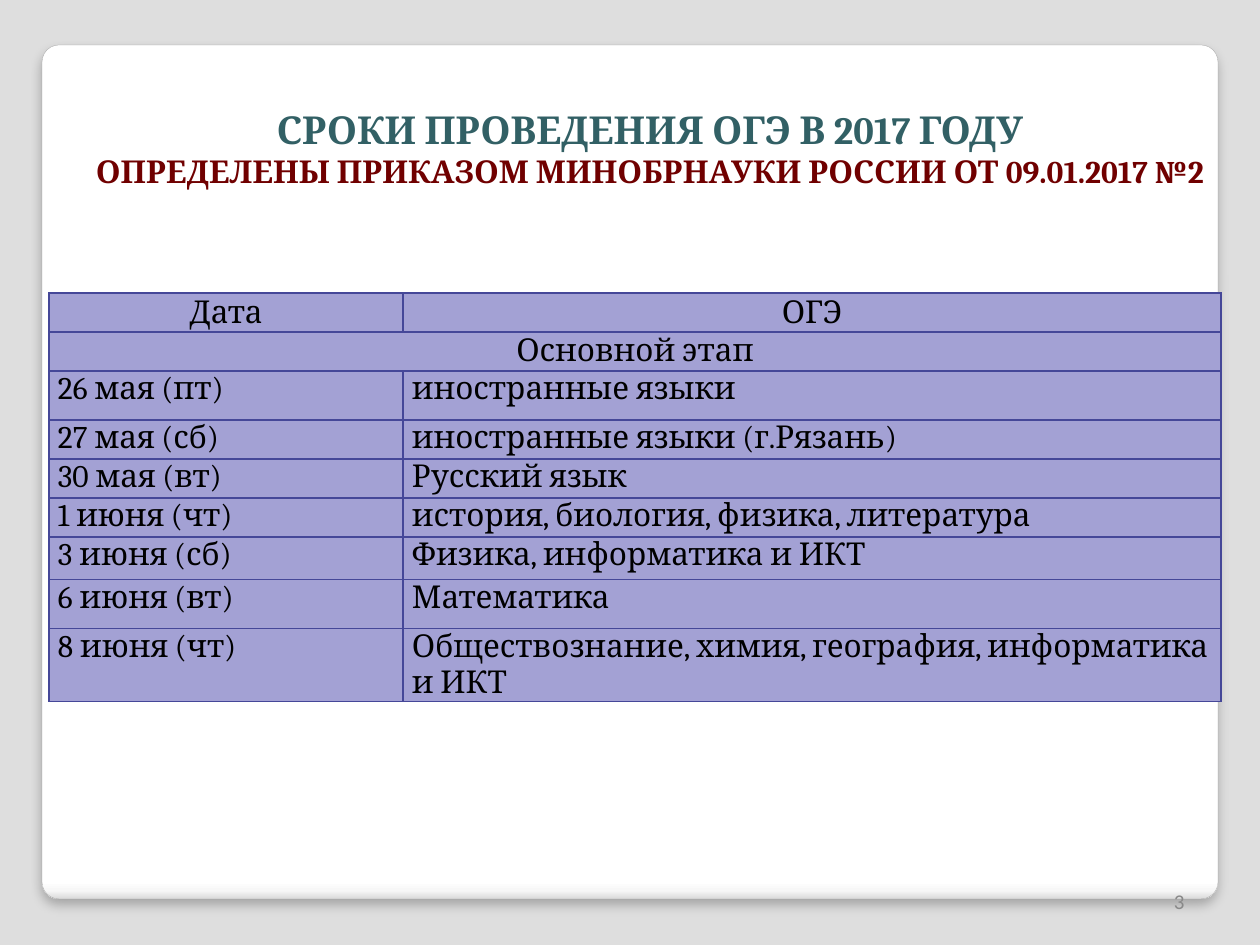
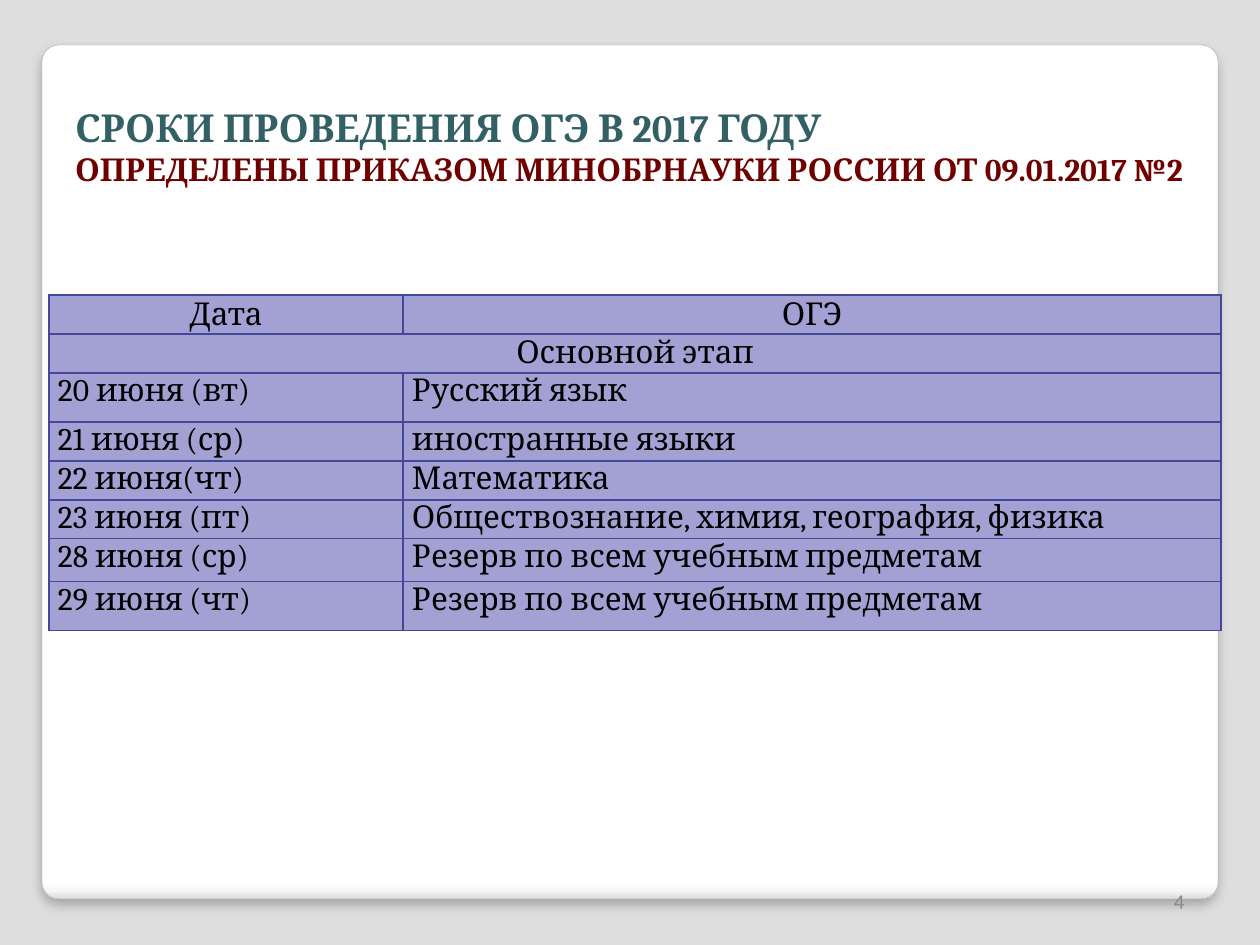
from dataclasses import dataclass

import lxml.etree
import pptx
import pptx.dml.color
import pptx.enum.shapes
import pptx.enum.text
import pptx.oxml.ns
import pptx.util

PX = 914400 / 126  # EMU per px
ALIGN = pptx.enum.text.PP_ALIGN
ANCHOR = pptx.enum.text.MSO_ANCHOR
qn = pptx.oxml.ns.qn


@dataclass(frozen=True)
class Theme:
    serif: str = "Cambria"
    sans: str = "Calibri"
    background: str = "DEDEDE"
    card_line: str = "A4A4A4"
    heading: str = "326065"
    subheading: str = "700000"
    cell: str = "A3A1D4"
    border: str = "454798"
    text: str = "000000"
    number: str = "898989"
    heading_size: int = 22
    body_size: int = 18
    number_size: int = 12


@dataclass(frozen=True)
class Box:
    left: int
    top: int
    width: int
    height: int

    def emu(self) -> tuple[int, ...]:
        return tuple(px(n) for n in (self.left, self.top, self.width, self.height))


@dataclass(frozen=True)
class Schedule:
    number: str
    title_box: Box
    title_align: ALIGN
    table_top: int
    exams: tuple[tuple[str, str], ...]


THEME = Theme()
CARD = Box(42, 45, 1176, 854)
CARD_STOPS = ((0, "FFFFFF"), (98, "FFFFFF"), (99, "F7F7F7"), (100, "DADADA"))
NUMBER_BOX = Box(903, 876, 294, 50)
TITLE_LINES = (
    "СРОКИ ПРОВЕДЕНИЯ ОГЭ В 2017 ГОДУ",
    "ОПРЕДЕЛЕНЫ ПРИКАЗОМ МИНОБРНАУКИ РОССИИ ОТ 09.01.2017 №2",
)
TABLE_LEFT = 49
COLUMN_WIDTHS = (354, 818)
ROW_HEIGHTS = (39, 39, 49, 39, 39, 39, 43, 49, 49)
HEADINGS = (("Дата", "ОГЭ"), ("Основной этап", ""))

SCHEDULES = (
    Schedule("3", Box(83, 137, 1134, 135), ALIGN.CENTER, 293, (
        ("26 мая (пт)", "иностранные языки"),
        ("27 мая (сб)", "иностранные языки (г.Рязань)"),
        ("30 мая (вт)", "Русский язык"),
        ("1 июня (чт)", "история, биология, физика, литература"),
        ("3 июня (сб)", "Физика, информатика и ИКТ"),
        ("6 июня (вт)", "Математика"),
        ("8 июня (чт)", "Обществознание, химия, география, информатика и ИКТ"),
    )),
    Schedule("4", Box(63, 135, 1134, 135), ALIGN.LEFT, 295, (
        ("20 июня (вт)", "Русский язык"),
        ("21 июня (ср)", "иностранные языки"),
        ("22 июня(чт)", "Математика"),
        ("23 июня (пт)", "Обществознание, химия, география, физика"),
        ("28 июня (ср)", "Резерв по всем учебным предметам"),
        ("29 июня (чт)", "Резерв по всем учебным предметам"),
    )),
)


def px(length: int) -> int:
    return round(length * PX)


def rgb(color: str) -> pptx.dml.color.RGBColor:
    return pptx.dml.color.RGBColor.from_string(color)


def child(parent, tag: str, **attributes: str):
    return lxml.etree.SubElement(parent, qn(tag), attributes)


def format_span(span, font: str, size: int, color: str, bold: bool = False) -> None:
    span.font.name = font
    span.font.size = pptx.util.Pt(size)
    span.font.bold = bold
    span.font.color.rgb = rgb(color)


def set_margins(target, left: int, top: int, right: int, bottom: int) -> None:
    target.margin_left, target.margin_top = px(left), px(top)
    target.margin_right, target.margin_bottom = px(right), px(bottom)


def add_card(page, layout) -> None:
    """Build the white card and hand it to the layout that all pages share."""
    card = page.shapes.add_shape(pptx.enum.shapes.MSO_SHAPE.ROUNDED_RECTANGLE, *CARD.emu())
    card.adjustments[0] = 0.02
    card.fill.gradient()
    card.fill.gradient_angle = 270
    card.line.color.rgb = rgb(THEME.card_line)
    card.line.width = pptx.util.Pt(0.16)
    card.shadow.inherit = False
    properties = card._element.spPr

    stops = properties.find(".//" + qn("a:gsLst"))
    for stop in list(stops):
        stops.remove(stop)
    for percent, color in CARD_STOPS:
        child(child(stops, "a:gs", pos=str(percent * 1000)), "a:srgbClr", val=color)

    shadow = child(properties.find(qn("a:effectLst")), "a:outerShdw",
                   blurRad=str(pptx.util.Pt(6)), dist=str(pptx.util.Pt(4)),
                   dir="5400000", rotWithShape="0")
    child(child(shadow, "a:srgbClr", val="000000"), "a:alpha", val="25000")
    layout.shapes._spTree.insert(2, card._element)


def set_title(page, schedule: Schedule) -> None:
    title = page.shapes.title
    title.left, title.top, title.width, title.height = schedule.title_box.emu()
    frame = title.text_frame
    frame.auto_size = pptx.enum.text.MSO_AUTO_SIZE.NONE
    frame.word_wrap = True
    frame.vertical_anchor = ANCHOR.BOTTOM
    set_margins(frame, 12, 6, 12, 82)
    para = frame.paragraphs[0]
    para.text = "\v".join(TITLE_LINES)
    para.alignment = schedule.title_align
    heading, subheading = para.runs
    format_span(heading, THEME.serif, THEME.heading_size, THEME.heading, True)
    format_span(subheading, THEME.serif, THEME.body_size, THEME.subheading, True)
    # The line break takes the size of the line it ends
    line_break = para._p.find(qn("a:br"))
    mark = child(line_break, "a:rPr", sz=str(THEME.heading_size * 100))
    child(mark, "a:latin", typeface=THEME.serif)


def format_cell(cell, text: str, is_heading: bool, is_middle: bool) -> None:
    properties = cell._tc.get_or_add_tcPr()
    for side in ("a:lnL", "a:lnR", "a:lnT", "a:lnB"):
        line = child(properties, side, w=str(pptx.util.Pt(0.75)))
        child(child(line, "a:solidFill"), "a:srgbClr", val=THEME.border)
    cell.fill.solid()
    cell.fill.fore_color.rgb = rgb(THEME.cell)
    cell.vertical_anchor = ANCHOR.MIDDLE if is_middle else ANCHOR.TOP
    set_margins(cell, *((1, 1, 1, 0) if is_heading else (9, 0, 9, 0)))
    if not text:
        return
    para = cell.text_frame.paragraphs[0]
    para.text = text
    para.alignment = ALIGN.CENTER if is_heading else ALIGN.LEFT
    format_span(para.runs[0], THEME.serif, THEME.body_size, THEME.text)


def add_exam_table(page, schedule: Schedule) -> None:
    rows = HEADINGS + schedule.exams
    heights = ROW_HEIGHTS[:len(rows)]
    area = Box(TABLE_LEFT, schedule.table_top, sum(COLUMN_WIDTHS), sum(heights))
    table = page.shapes.add_table(len(rows), len(COLUMN_WIDTHS), *area.emu()).table
    table.first_row = False
    table.horz_banding = False
    for column, width in zip(table.columns, COLUMN_WIDTHS):
        column.width = px(width)
    for row, height in zip(table.rows, heights):
        row.height = px(height)
    for index, texts in enumerate(rows):
        for cell, text in zip(table.rows[index].cells, texts):
            format_cell(cell, text, index < len(HEADINGS), index == 0)
    table.cell(1, 0).merge(table.cell(1, 1))


def add_page_number(page, number: str) -> None:
    frame = page.shapes.add_textbox(*NUMBER_BOX.emu()).text_frame
    frame.word_wrap = True
    frame.vertical_anchor = ANCHOR.MIDDLE
    para = frame.paragraphs[0]
    para.text = number
    para.alignment = ALIGN.RIGHT
    format_span(para.runs[0], THEME.sans, THEME.number_size, THEME.number)


def main() -> None:
    deck = pptx.Presentation()
    deck.slide_width, deck.slide_height = px(1260), px(945)
    layout = deck.slide_layouts.get_by_name("Title Only")

    # Shared background
    fill = deck.slide_master.background.fill
    fill.solid()
    fill.fore_color.rgb = rgb(THEME.background)

    # Pages
    for schedule in SCHEDULES:
        page = deck.slides.add_slide(layout)
        if schedule is SCHEDULES[0]:
            add_card(page, layout)
        set_title(page, schedule)
        add_exam_table(page, schedule)
        add_page_number(page, schedule.number)

    deck.save("out.pptx")


if __name__ == "__main__":
    main()
